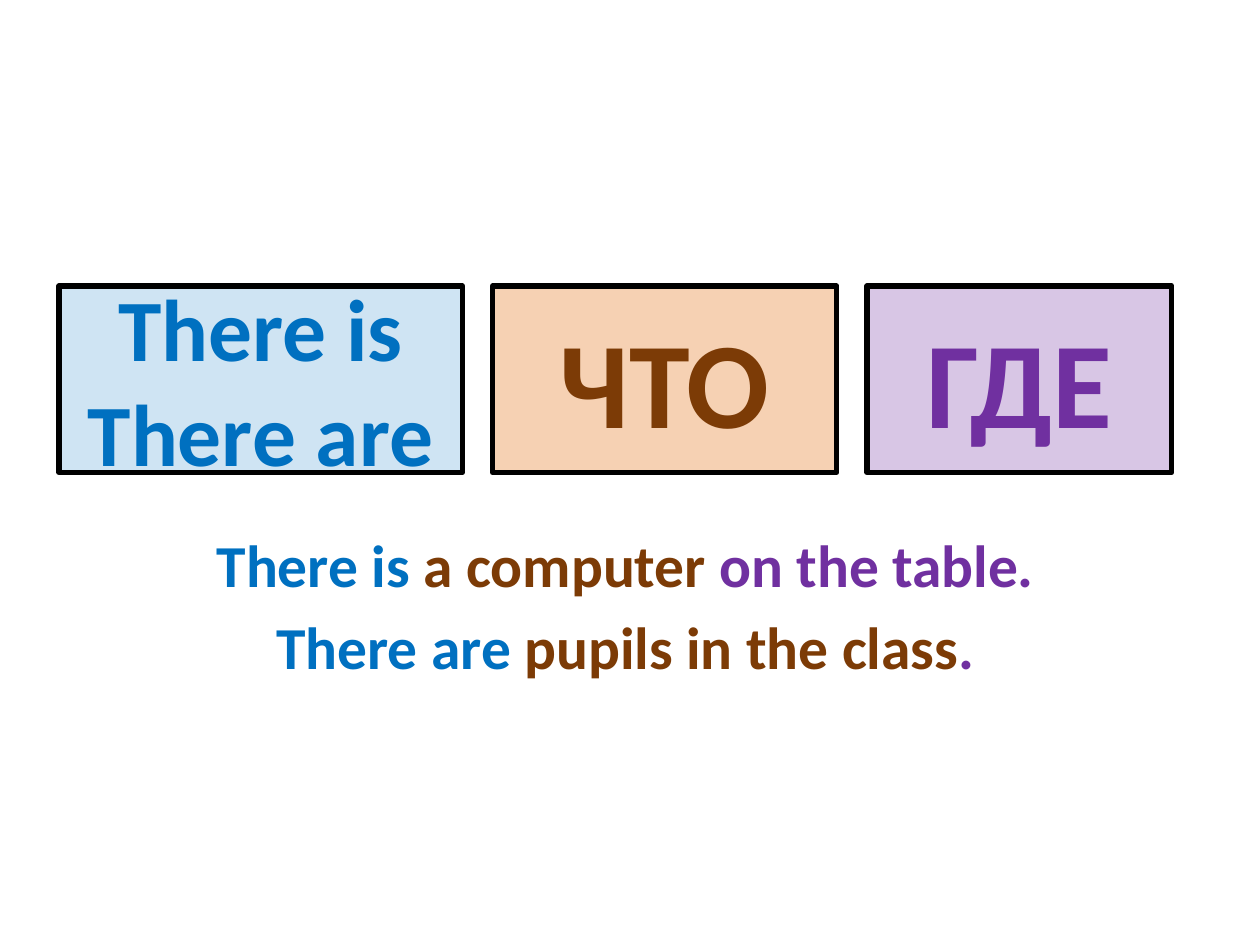
"""Build a slide showing the word order of There is / There are sentences."""
import pptx
import pptx.dml.color
import pptx.enum.shapes
import pptx.enum.text
import pptx.oxml.ns
import pptx.util
from lxml import etree

Pt = pptx.util.Pt
RGBColor = pptx.dml.color.RGBColor
BLUE = RGBColor(0x00, 0x70, 0xC0)
BROWN = RGBColor(0x7C, 0x3B, 0x06)
PURPLE = RGBColor(0x70, 0x30, 0xA0)
ORANGE = RGBColor(0xE4, 0x6C, 0x0A)
BLACK = RGBColor(0x00, 0x00, 0x00)
CENTER = pptx.enum.text.PP_ALIGN.CENTER


def add_colored_run(paragraph, text, size, color):
    run = paragraph.add_run()
    run.text = text
    for attribute, value in {"name": "Calibri", "size": Pt(size), "bold": True}.items():
        setattr(run.font, attribute, value)
    run.font.color.rgb = color


deck = pptx.Presentation()
deck.slide_width, deck.slide_height = Pt(720), Pt(540)
slide = deck.slides.add_slide(deck.slide_layouts[1])
unused_title = slide.shapes.title.element
unused_title.getparent().remove(unused_title)

examples = slide.placeholders[1]
examples_place = {"left": Pt(73.4), "top": Pt(298), "width": Pt(568), "height": Pt(112.3)}
for attribute, value in examples_place.items():
    setattr(examples, attribute, value)

sentences = [
    [("There is ", BLUE), ("a computer ", BROWN), ("on the table.", PURPLE)],
    [("There are ", BLUE), ("pupils in the class", BROWN), (".", PURPLE)],
]
for index, sentence in enumerate(sentences):
    frame = examples.text_frame
    paragraph = frame.add_paragraph() if index else frame.paragraphs[0]
    paragraph.alignment = CENTER
    paragraph.space_before = Pt(6 if index else 0)
    properties = paragraph._p.get_or_add_pPr()
    properties.set("marL", str(Pt(27)))
    properties.set("indent", str(Pt(-27)))
    etree.SubElement(properties, pptx.oxml.ns.qn("a:buNone"))
    for text, color in sentence:
        add_colored_run(paragraph, text, 34, color)

sentence_parts = [
    (["There is", "There are"], 230.4, 50, BLUE, BLUE, 19),
    (["ЧТО"], 196.6, 70, BROWN, ORANGE, 31),
    (["ГДЕ"], 174.2, 70, PURPLE, PURPLE, 27),
]
left, gap = 33.8, 17.3
for lines, width, size, text_color, fill_color, opacity in sentence_parts:
    part = slide.shapes.add_shape(
        pptx.enum.shapes.MSO_SHAPE.RECTANGLE, Pt(left), Pt(163.4), Pt(width), Pt(106.6)
    )
    part.shadow.inherit = False
    part.fill.solid()
    part.fill.fore_color.rgb = fill_color
    fill_element = part.element.spPr.find(".//" + pptx.oxml.ns.qn("a:srgbClr"))
    etree.SubElement(fill_element, pptx.oxml.ns.qn("a:alpha"), val=str(opacity * 1000))
    part.line.color.rgb = BLACK
    part.line.width = Pt(3)
    part.text_frame.vertical_anchor = pptx.enum.text.MSO_ANCHOR.MIDDLE
    for index, text in enumerate(lines):
        frame = part.text_frame
        paragraph = frame.add_paragraph() if index else frame.paragraphs[0]
        paragraph.alignment = CENTER
        add_colored_run(paragraph, text, size, text_color)
    left += width + gap

deck.save("out.pptx")
